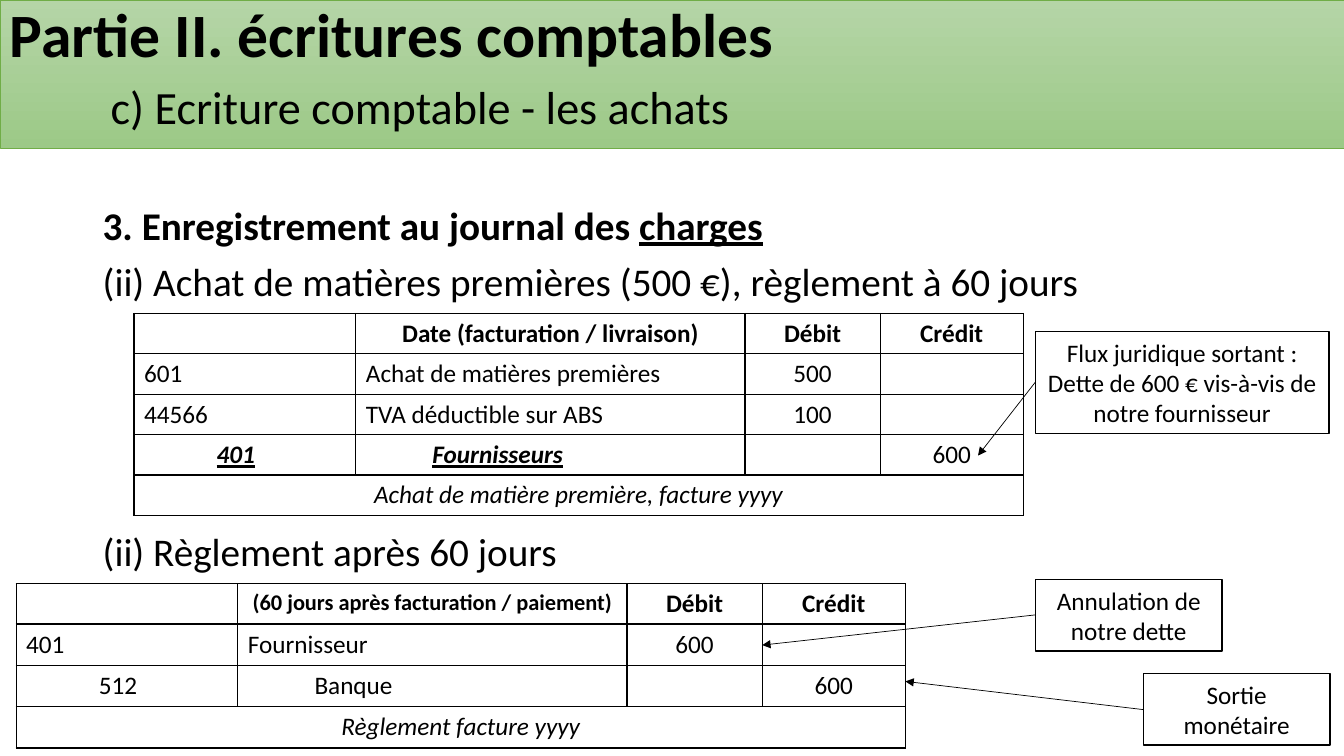
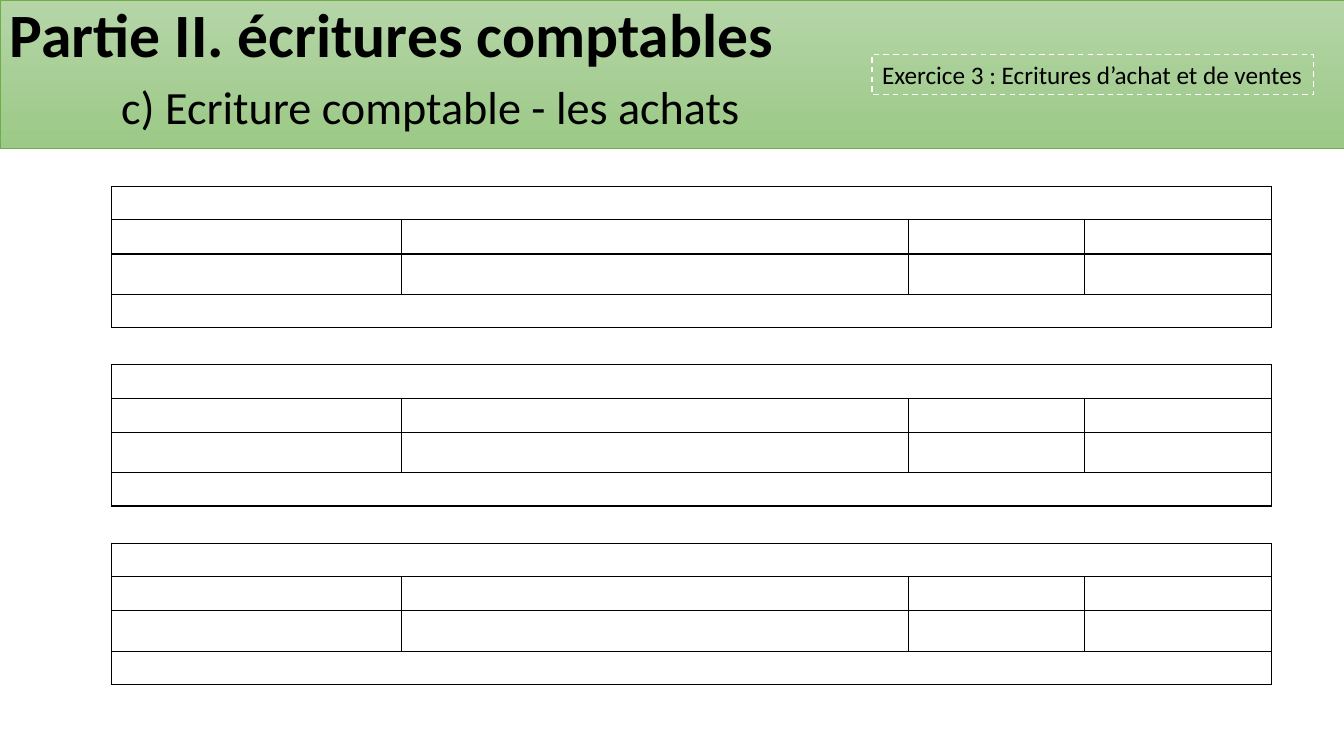
from lxml import etree
from pptx import Presentation
from pptx import util as u
from pptx.dml.color import RGBColor
from pptx.enum import dml, shapes, text
from pptx.oxml.ns import qn

COLOURS = {
    "ink": "000000",
    "paper": "FFFFFF",
    "band_top": "B5D5A7",
    "band_bottom": "9CC987",
    "band_edge": "70AD47",
}
FONT = "Calibri"
LEFT, CENTRE = text.PP_ALIGN.LEFT, text.PP_ALIGN.CENTER
COLUMNS = [0.72, 1.48, 0.66, 3.2, 1.34, 1.42]
EMPHASIS = dict(bold=True, italic=True, underline=True)


def rgb(name):
    return RGBColor.from_string(COLOURS[name])


def write(paragraph, words, size=18, align=None, line_spacing=None, before=None, **style):
    """Add a run; style holds bold, italic and underline."""
    run = paragraph.add_run()
    run.text = words
    run.font.name, run.font.size = FONT, u.Pt(size)
    run.font.color.rgb = rgb("ink")
    for key, value in style.items():
        setattr(run.font, key, value)
    if align is not None:
        paragraph.alignment = align
    if line_spacing is not None:
        paragraph.line_spacing = line_spacing
    if before is not None:
        paragraph.space_before = u.Pt(before)


def draw_borders(cell, sides):
    properties = cell._tc.get_or_add_tcPr()
    for side in "LRTB":
        edge = etree.SubElement(properties, qn(f"a:ln{side}"), w=str(u.Pt(1)))
        if side in sides:
            fill = etree.SubElement(edge, qn("a:solidFill"))
            etree.SubElement(fill, qn("a:srgbClr"), val=COLOURS["ink"])
        else:
            etree.SubElement(edge, qn("a:noFill"))


class Deck:
    def __init__(self):
        self.presentation = Presentation()
        self.presentation.slide_width = u.Inches(13.33)
        self.presentation.slide_height = u.Inches(7.5)
        self.slide = None

    def new_slide(self, subtitle):
        self.slide = self.presentation.slides.add_slide(self.presentation.slide_layouts[6])
        band = self.box(0, 0, 13.33, 1.47, edge="band_edge", weight=0.5)
        band.fill.gradient()
        band.fill.gradient_angle = 270
        for stop, colour in zip(band.fill.gradient_stops, ("band_top", "band_bottom")):
            stop.color.rgb = rgb(colour)
        band.text_frame.margin_bottom = u.Inches(0.11)
        title = band.text_frame.paragraphs[0]
        write(title, "Partie II. écritures comptables", size=44, bold=True,
              align=LEFT, line_spacing=0.9)
        title.add_line_break()
        write(title, "\t", size=44, bold=True)
        write(title, subtitle, size=33)
        # The subtitle is indented by one tab of an inch
        tabs = etree.SubElement(title._p.get_or_add_pPr(), qn("a:tabLst"))
        etree.SubElement(tabs, qn("a:tab"), pos=str(u.Inches(1)), algn="l")

    def box(self, left, top, width, height, edge="ink", weight=1):
        shape = self.slide.shapes.add_shape(
            shapes.MSO_SHAPE.RECTANGLE, *map(u.Inches, (left, top, width, height)))
        shape.shadow.inherit = False
        shape.fill.background()
        shape.line.color.rgb = rgb(edge)
        shape.line.width = u.Pt(weight)
        shape.text_frame.word_wrap = True
        shape.text_frame.vertical_anchor = text.MSO_ANCHOR.MIDDLE
        return shape

    def note(self, left, top, width, height, *lines):
        note = self.box(left, top, width, height)
        note.fill.solid()
        note.fill.fore_color.rgb = rgb("paper")
        frame = note.text_frame
        for i, line in enumerate(lines):
            write(frame.add_paragraph() if i else frame.paragraphs[0], line, align=CENTRE)

    def tag(self, left, top, width, height, words):
        tag = self.box(left, top, width, height, edge="paper")
        tag.line.dash_style = dml.MSO_LINE.DASH
        tag.text_frame.word_wrap = False
        write(tag.text_frame.paragraphs[0], words, align=LEFT)

    def arrow(self, *ends):
        arrow = self.slide.shapes.add_connector(
            shapes.MSO_CONNECTOR.STRAIGHT, *map(u.Inches, ends))
        arrow.line.color.rgb = rgb("ink")
        arrow.line.width = u.Pt(0.5)
        etree.SubElement(arrow.line._get_or_add_ln(), qn("a:tailEnd"), type="triangle")
        etree.SubElement(arrow._element.spPr, qn("a:effectLst"))

    def outline(self, left, top, width, height, paragraphs):
        """Each paragraph is its space before and its (text, style) runs."""
        frame = self.slide.shapes.add_textbox(
            *map(u.Inches, (left, top, width, height))).text_frame
        frame.word_wrap = True
        for i, (before, runs) in enumerate(paragraphs):
            paragraph = frame.add_paragraph() if i else frame.paragraphs[0]
            for words, style in runs:
                write(paragraph, words, size=28, line_spacing=0.9, before=before, **style)

    def journal(self, left, top, columns, heights, rows, margin=0.05):
        """Each row is its kind (head, debit, credit, caption) and its (text, style) entries."""
        table = self.slide.shapes.add_table(
            len(rows), len(columns), u.Inches(left), u.Inches(top),
            u.Inches(sum(columns)), u.Inches(sum(heights))).table
        table.first_row = table.horz_banding = False
        for column, width in zip(table.columns, columns):
            column.width = u.Inches(width)
        for r, (kind, entries) in enumerate(rows):
            table.rows[r].height = u.Inches(heights[r])
            cells = [table.cell(r, c) for c in range(len(columns))]
            # Borders: a credit line is indented, with no rule inside its column pairs
            for c, cell in enumerate(cells):
                open_side = "RL"[c % 2] if kind == "credit" and c < 4 else ""
                draw_borders(cell, set("LRTB") - set(open_side))
                cell.fill.background()
                cell.margin_top = cell.margin_bottom = u.Inches(margin)
            # Merged fields
            if kind == "caption":
                cells[0].merge(cells[-1])
            elif kind != "credit":
                cells[0].merge(cells[1])
                cells[2].merge(cells[3])
            # Entries
            places = {"caption": [0], "credit": [1, 3, 4, 5]}.get(kind, [0, 2, 4, 5])
            for place, (words, style) in zip(places, entries):
                if words:
                    centred = kind in ("head", "caption") or place > 3
                    write(cells[place].text_frame.paragraphs[0], words,
                          align=CENTRE if centred else LEFT, **style)


def head(label, size=18):
    return "head", [("", {})] + [(words, dict(bold=True, size=points)) for words, points in
                                 ((label, size), ("Débit", 18), ("Crédit", 18))]


def debit(account, label, amount):
    return "debit", [(account, {}), (label, {}), (amount, {})]


def credit(account, label, amount, **style):
    return "credit", [(account, style), (label, style), ("", {}), (amount, {})]


def caption(words):
    return "caption", [(words, dict(italic=True))]


def purchase_slide(deck):
    deck.new_slide("c) Ecriture comptable - les achats")
    deck.outline(0.92, 2, 11.5, 4.76, [
        (10, [("3. Enregistrement au journal des ", dict(bold=True)),
              ("charges", dict(bold=True, underline=True))]),
        (10, [("(ii) Achat de matières premières (500 €), règlement à 60 jours", {})]),
        (162.5, [("(ii) Règlement après 60 jours", {})]),
    ])
    # Purchase entry
    deck.journal(1.33, 3.11, COLUMNS, [0.4] * 5, [
        head("Date (facturation / livraison)"),
        debit("601", "Achat de matières premières", "500"),
        debit("44566", "TVA déductible sur ABS", "100"),
        credit("401", "Fournisseurs", "600", **EMPHASIS),
        caption("Achat de matière première, facture yyyy"),
    ])
    # Payment entry
    deck.journal(0.16, 5.79, COLUMNS, [0.4, 0.41, 0.41, 0.41], [
        head("(60 jours après facturation / paiement)", size=16),
        debit("401", "Fournisseur", "600"),
        credit("512", "Banque", "600"),
        caption("Règlement facture yyyy"),
    ])
    # Notes and their arrows
    deck.note(10.27, 3.29, 2.91, 1.01, "Flux juridique sortant :",
              "Dette de 600 € vis-à-vis de notre fournisseur")
    deck.arrow(10.27, 3.79, 9.7, 4.52)
    deck.note(11.34, 6.68, 1.85, 0.71, "Sortie monétaire")
    deck.arrow(11.34, 7.04, 8.98, 6.76)
    deck.note(10.27, 5.75, 1.85, 0.71, "Annulation de notre dette")
    deck.arrow(10.27, 6.1, 7.56, 6.4)


def exercise_slide(deck):
    deck.new_slide(" c) Ecriture comptable - les achats")
    deck.tag(8.65, 0.54, 4.38, 0.4, "Exercice 3 : Ecritures d’achat et de ventes")
    # Blank journals to fill in
    columns = [0.94, 1.93, 0.86, 4.17, 1.75, 1.85]
    blank_rows = [(kind, []) for kind in ("caption", "debit", "credit", "caption")]
    for i in range(3):
        deck.journal(1.11, 1.85 + 1.77 * i, columns, [0.33, 0.34, 0.4, 0.33],
                     blank_rows, margin=0.01)


def main():
    deck = Deck()
    purchase_slide(deck)
    exercise_slide(deck)
    deck.presentation.save("out.pptx")


if __name__ == "__main__":
    main()
